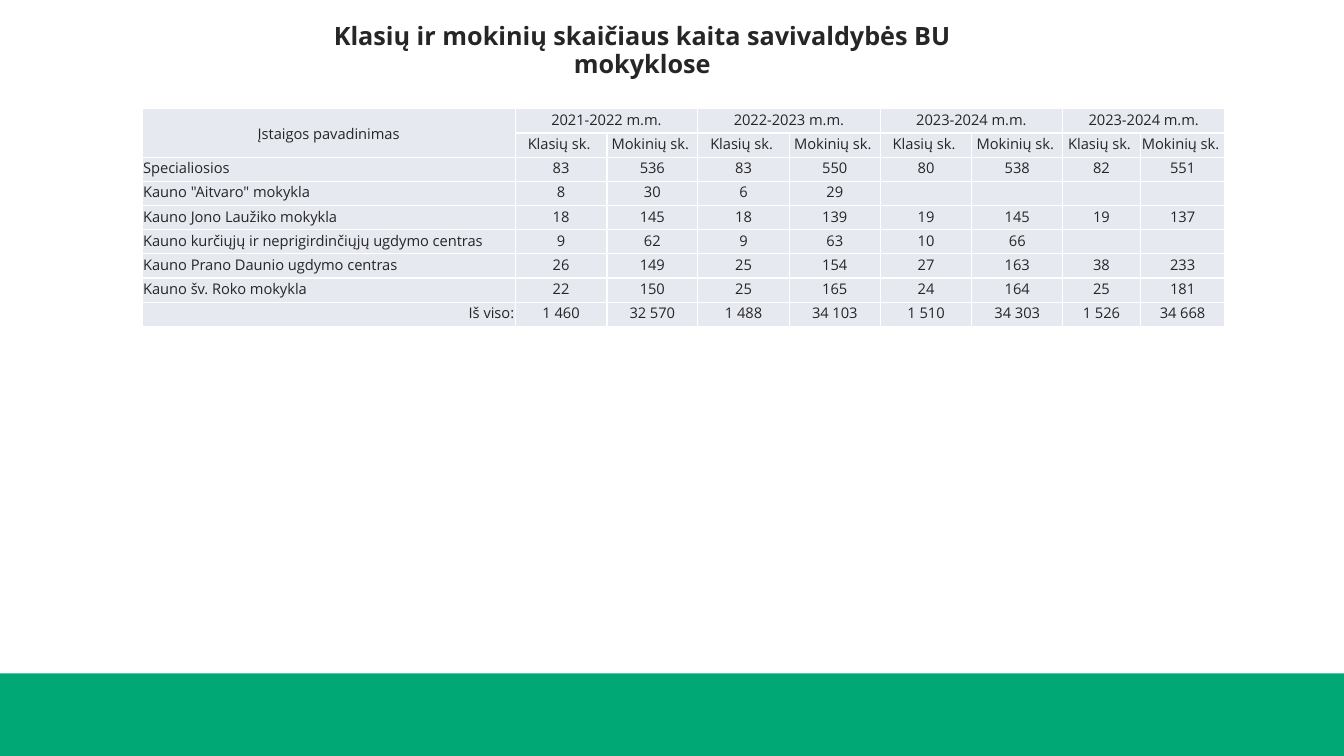
import dataclasses

import pptx
import pptx.dml.color
import pptx.enum.shapes
import pptx.enum.text
import pptx.util
from lxml import etree
from pptx.oxml.ns import qn

Inches = pptx.util.Inches
Pt = pptx.util.Pt
ALIGN = pptx.enum.text.PP_ALIGN
ANCHOR = pptx.enum.text.MSO_ANCHOR


@dataclasses.dataclass(frozen=True)
class Theme:
    font: str = "Open Sans"
    text: str = "262626"
    band: str = "00A875"
    cell: str = "E7E9F0"
    border: str = "FFFFFF"
    title_size: float = 18
    table_size: float = 10.5


THEME = Theme()

# Table content: school years, column labels, rows
YEARS = ["2021-2022 m.m.", "2022-2023 m.m.", "2023-2024 m.m.", "2023-2024 m.m."]
LABELS = ["Klasių sk. ", "Mokinių sk. "]
SCHOOLS = [
    ["Specialiosios", "83", "536", "83", "550", "80", "538", "82", "551"],
    ['Kauno "Aitvaro" mokykla', "8", "30", "6", "29", "", "", "", ""],
    ["Kauno Jono Laužiko mokykla", "18", "145", "18", "139", "19", "145", "19", "137"],
    ["Kauno kurčiųjų ir neprigirdinčiųjų ugdymo centras",
     "9", "62", "9", "63", "10", "66", "", ""],
    ["Kauno Prano Daunio ugdymo centras",
     "26", "149", "25", "154", "27", "163", "38", "233"],
    ["Kauno šv. Roko mokykla", "22", "150", "25", "165", "24", "164", "25", "181"],
    ["Iš viso:", "1 460", "32 570", "1 488", "34 103",
     "1 510", "34 303", "1 526", "34 668"],
]
COLUMN_WIDTHS = [3.7] + [0.91, 0.9] * 3 + [0.77, 0.84]
ROW_HEIGHT = 0.24


def color(value):
    return pptx.dml.color.RGBColor.from_string(value)


def write(frame, text, size, align=ALIGN.CENTER, bold=False, spacing=None):
    para = frame.paragraphs[0]
    para.alignment = align
    para.line_spacing = spacing
    if not text:
        # An empty cell keeps the table's type size so its row stays low
        etree.SubElement(para._p, qn("a:endParaRPr"), sz=str(int(size * 100)))
        return
    span = para.add_run()
    span.text = text
    span.font.name = THEME.font
    span.font.size = Pt(size)
    span.font.bold = bold
    span.font.color.rgb = color(THEME.text)


def add_band(page, left, top, width, height):
    band = page.shapes.add_shape(
        pptx.enum.shapes.MSO_SHAPE.RECTANGLE,
        Inches(left), Inches(top), Inches(width), Inches(height))
    band.shadow.inherit = False
    band.fill.solid()
    band.fill.fore_color.rgb = color(THEME.band)
    band.line.fill.background()


def set_title(page, text, left, top, width, height):
    title = page.shapes.title
    title.left, title.top = Inches(left), Inches(top)
    title.width, title.height = Inches(width), Inches(height)
    frame = title.text_frame
    frame.word_wrap = True
    frame.auto_size = pptx.enum.text.MSO_AUTO_SIZE.SHAPE_TO_FIT_TEXT
    frame.vertical_anchor = ANCHOR.TOP
    write(frame, text, THEME.title_size, bold=True, spacing=0.9)


def style_cell(cell):
    cell.margin_left = cell.margin_right = cell.margin_top = Inches(0.01)
    cell.margin_bottom = 0
    properties = cell._tc.get_or_add_tcPr()
    for side in ("lnL", "lnR", "lnT", "lnB"):
        line = etree.SubElement(properties, qn(f"a:{side}"), w=str(Pt(1)))
        fill = etree.SubElement(line, qn("a:solidFill"))
        etree.SubElement(fill, qn("a:srgbClr"), val=THEME.border)
    cell.fill.solid()
    cell.fill.fore_color.rgb = color(THEME.cell)


def add_school_table(page, left, top):
    row_count = len(SCHOOLS) + 2
    table = page.shapes.add_table(
        row_count, len(COLUMN_WIDTHS), Inches(left), Inches(top),
        Inches(sum(COLUMN_WIDTHS)), Inches(ROW_HEIGHT * row_count)).table
    for column, width in zip(table.columns, COLUMN_WIDTHS):
        column.width = Inches(width)
    for row in table.rows:
        row.height = Inches(ROW_HEIGHT)

    # Two heading rows: each year spans its pair of columns
    year_row = ["Įstaigos pavadinimas"]
    for year in YEARS:
        year_row += [year, ""]
    label_row = [""] + LABELS * len(YEARS)

    for r, values in enumerate([year_row, label_row] + SCHOOLS):
        for c, value in enumerate(values):
            align = ALIGN.CENTER
            if c == 0 and r >= 2:
                align = ALIGN.RIGHT if r == row_count - 1 else ALIGN.LEFT
            cell = table.cell(r, c)
            style_cell(cell)
            write(cell.text_frame, value, THEME.table_size, align=align)

    table.cell(0, 0).merge(table.cell(1, 0))
    table.cell(0, 0).vertical_anchor = ANCHOR.MIDDLE
    for c in range(1, len(COLUMN_WIDTHS), 2):
        table.cell(0, c).merge(table.cell(0, c + 1))


def main():
    deck = pptx.Presentation()
    deck.slide_width, deck.slide_height = Inches(13.33), Inches(7.5)
    page = deck.slides.add_slide(deck.slide_layouts.get_by_name("Title Only"))
    add_band(page, 0, 6.68, 13.33, 0.82)
    add_school_table(page, 1.41, 1.08)
    set_title(page, "Klasių ir mokinių skaičiaus kaita savivaldybės BU mokyklose",
              3.04, 0.19, 6.66, 0.71)
    deck.save("out.pptx")


if __name__ == "__main__":
    main()
